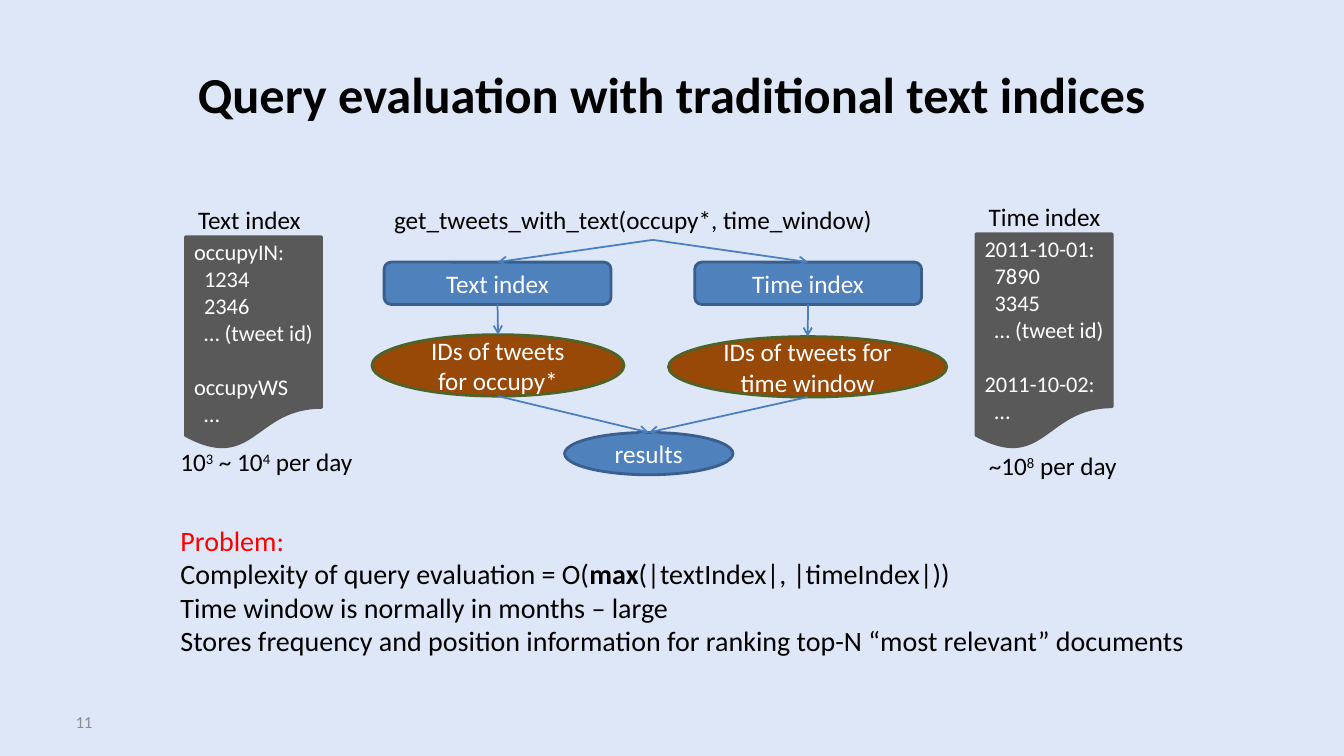
from lxml import etree
from pptx import Presentation
from pptx.dml.color import RGBColor
from pptx.enum.shapes import MSO_CONNECTOR, MSO_SHAPE
from pptx.enum.text import MSO_ANCHOR, MSO_AUTO_SIZE, PP_ALIGN
from pptx.oxml.ns import qn
from pptx.util import Inches, Pt

LINE = MSO_CONNECTOR.STRAIGHT
ROUND = MSO_SHAPE.ROUNDED_RECTANGLE
OVAL = MSO_SHAPE.OVAL
PAGE = MSO_SHAPE.FLOWCHART_DOCUMENT
LEFT, MID = PP_ALIGN.LEFT, PP_ALIGN.CENTER

WIDE, HIGH = Inches(13.33), Inches(7.5)
FONT = "Calibri"
HUES = {
    "back": "DEE7F8", "ink": "000000", "pale": "FFFFFF", "alert": "FF0000",
    "mute": "8C8C8C", "blue": "4F81BD", "edge": "3A5F8C", "arrow": "4B7EBC",
    "brown": "984807", "green": "4F6228", "gray": "595959",
}


def hue(name):
    return RGBColor.from_string(HUES[name])


def area(x, y, w, h):
    """Turn percentages of the slide into left, top, width, height."""
    return [int(side * part / 100)
            for side, part in zip((WIDE, HIGH, WIDE, HIGH), (x, y, w, h))]


def place(shape, *spot):
    shape.left, shape.top, shape.width, shape.height = area(*spot)


def style(para, size, color="ink", align=LEFT, bold=False):
    para.alignment = align
    for run in para.runs:
        font = run.font
        font.name, font.size, font.bold = FONT, Pt(size), bold
        font.color.rgb = hue(color)


def label(slide, spot, text, size=18, color="ink", anchor=MSO_ANCHOR.TOP):
    box = slide.shapes.add_textbox(*area(*spot))
    frame = box.text_frame
    frame.word_wrap = True
    frame.vertical_anchor = anchor
    frame.text = text
    for para in frame.paragraphs:
        style(para, size, color)
    return box


def node(slide, kind, spot, fill, edge, text=""):
    shape = slide.shapes.add_shape(kind, *area(*spot))
    shape.shadow.inherit = False
    shape.fill.solid()
    shape.fill.fore_color.rgb = hue(fill)
    shape.line.color.rgb = hue(edge)
    shape.line.width = Pt(2)
    if text:
        frame = shape.text_frame
        frame.word_wrap = True
        frame.vertical_anchor = MSO_ANCHOR.MIDDLE
        frame.text = text
        style(frame.paragraphs[0], 18, "pale", MID)
    return shape


def arrow(slide, start, end):
    """Point from the bottom centre of one shape to the top centre of another."""
    link = slide.shapes.add_connector(
        LINE, start.left + start.width // 2, start.top + start.height,
        end.left + end.width // 2, end.top)
    link.line.color.rgb = hue("arrow")
    link.line.width = Pt(1.25)
    props = link.element.spPr
    etree.SubElement(props.find(qn("a:ln")), qn("a:tailEnd"), type="arrow")
    etree.SubElement(props, qn("a:effectLst"))


def index(slide, x, y, h, name, groups):
    """Draw a page of index keys, each followed by its indented entries."""
    node(slide, PAGE, (x, y, 10.13, h), "gray", "gray")
    label(slide, (x + 0.2, y - 4.93, 11, 5.33), name)
    rows = [row for group in groups for row in group]
    box = label(slide, (x - 0.1, y - 0.45, 11, 26.5),
                "\n".join(rows), 16, "pale")
    keys = [group[0] for group in groups]
    for para in box.text_frame.paragraphs:
        if para.text not in keys:
            para._p.get_or_add_pPr().set("marL", str(Inches(0.1)))
        elif para.text != keys[0]:
            para.space_before = Pt(19.5)


def count(slide, spot, parts):
    """Write a row in which every second part is a superscript."""
    para = label(slide, spot, "").text_frame.paragraphs[0]
    for part in parts:
        para.add_run().text = part
    style(para, 18)
    for run in para.runs[1::2]:
        run.font._element.set("baseline", "30000")


def heading(slide, text):
    title = slide.shapes.title
    place(title, 5, 4, 90, 16.67)
    frame = title.text_frame
    frame.text = text
    frame.vertical_anchor = MSO_ANCHOR.MIDDLE
    style(frame.paragraphs[0], 36, align=MID, bold=True)


def points(slide, rows):
    """Fill the body; each row is a list of parts, every second one bold."""
    body = slide.placeholders[1]
    place(body, 12.68, 68.53, 77.04, 19.33)
    frame = body.text_frame
    frame.auto_size = MSO_AUTO_SIZE.NONE
    for i, parts in enumerate(rows):
        para = frame.add_paragraph() if i else frame.paragraphs[0]
        props = para._p.get_or_add_pPr()
        props.set("marL", "0")
        props.set("indent", "0")
        etree.SubElement(props, qn("a:buNone"))
        para.space_before = Pt(0)
        for part in parts:
            para.add_run().text = part
        style(para, 20, "ink" if i else "alert")
        for run in para.runs[1::2]:
            run.font.bold = True


def flow(slide):
    call = label(slide, (28.58, 26.4, 39.98, 5.33),
                 "get_tweets_with_text(occupy*, time_window)")
    result = node(slide, OVAL, (42.01, 57.2, 12.53, 5.6),
                  "blue", "edge", "results")
    paths = [
        (28.58, "Text index", (27.68, 44.27, 18.75, 8.13),
         "IDs of tweets for occupy*"),
        (51.69, "Time index", (49.74, 44.53, 20.7, 8),
         "IDs of tweets for time window"),
    ]
    for x, name, spot, text in paths:
        step = node(slide, ROUND, (x, 34.67, 16.88, 5.6), "blue", "edge", name)
        ids = node(slide, OVAL, spot, "brown", "green", text)
        for start, end in ((call, step), (step, ids), (ids, result)):
            arrow(slide, start, end)


def main():
    deck = Presentation()
    deck.slide_width, deck.slide_height = WIDE, HIGH
    slide = deck.slides.add_slide(deck.slide_layouts[1])
    slide.background.fill.solid()
    slide.background.fill.fore_color.rgb = hue("back")

    heading(slide, "Query evaluation with traditional text indices")
    points(slide, [
        ["Problem:"],
        ["Complexity of query evaluation = O(", "max",
         "(|textIndex|, |timeIndex|))"],
        ["Time window is normally in months – large"],
        ["Stores frequency and position information for ranking "
         "top-N “most relevant” documents"],
    ])
    flow(slide)
    index(slide, 13.8, 31.33, 28.13, "Text index",
          [["occupyIN:", "1234", "2346", "… (tweet id)"], ["occupyWS", "…"]])
    index(slide, 72.62, 30.93, 28.53, "Time index",
          [["2011-10-01:", "7890", "3345", "… (tweet id)"],
           ["2011-10-02:", "…"]])
    count(slide, (12.68, 58.4, 16, 5.33), ["10", "3", " ~ 10", "4", " per day"])
    count(slide, (72.84, 58.93, 11.55, 5.33), ["~10", "8", " per day"])
    label(slide, (4.88, 92.8, 23.33, 5.33), "11", 12, "mute", MSO_ANCHOR.MIDDLE)
    deck.save("out.pptx")


if __name__ == "__main__":
    main()
